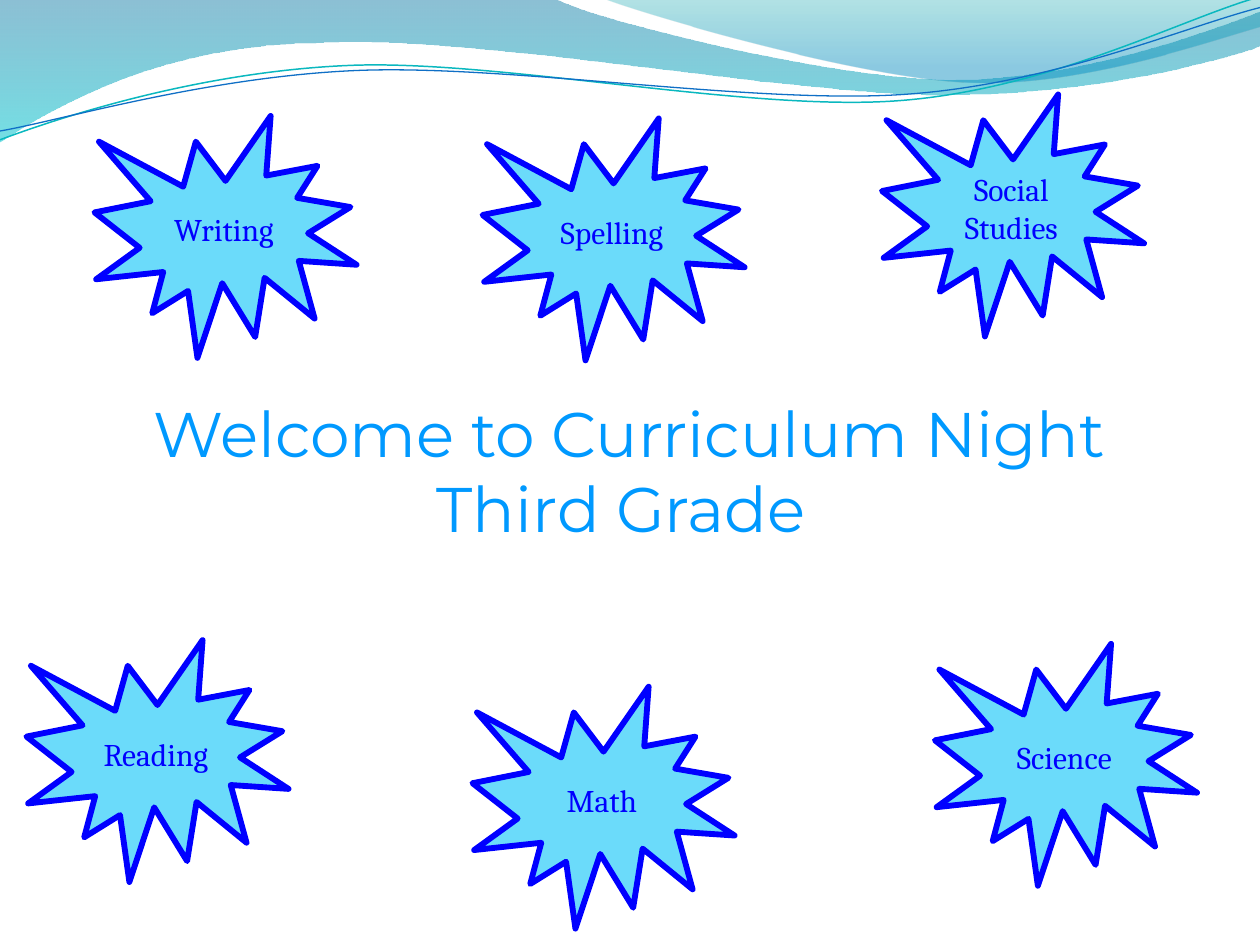
from dataclasses import dataclass

from lxml import etree
from pptx import Presentation
from pptx import util as u
from pptx.dml.color import RGBColor
from pptx.enum import shapes, text
from pptx.oxml import ns

Point = tuple[float, float]
Segment = tuple[Point, ...]
SEAL_WIDTH, SEAL_HEIGHT = 2.08, 1.92
BLUE = "0000FF"


@dataclass
class Stop:
    color: str
    position: float
    opacity: int


@dataclass
class Band:
    start: Point
    segments: list[Segment]
    stops: tuple[Stop, Stop]


@dataclass
class Strand:
    start: Point
    segments: list[Segment]
    color: str
    width: float


@dataclass
class Seal:
    left: float
    top: float
    lines: tuple[str, ...]


@dataclass
class TextStyle:
    font: str
    size: float
    color: str
    outline: float


BANDS = [
    Band((0, -0.01), [((4.4, -0.01),),
                      ((4.76, 0.17), (6.64, 0.63), (7.58, 0.63)),
                      ((8.53, 0.63), (9.58, 0.26), (10, 0.09)),
                      ((10.01, 0.36),),
                      ((9.83, 0.44), (8.7, 0.76), (7.46, 0.75)),
                      ((6.22, 0.75), (3.82, 0.28), (2.57, 0.34)),
                      ((1.29, 0.35), (0.46, 0.83), (-0.01, 1.13)),
                      ((0, -0.01),)],
         (Stop("0074A1", 0, 45), Stop("00C6CF", 1, 55))),
    Band((4.79, -0.01), [((5.09, 0.11), (6.82, 0.62), (7.69, 0.65)),
                         ((8.56, 0.69), (9.61, 0.32), (10, 0.21)),
                         ((10, 0),),
                         ((4.79, -0.01),)],
         (Stop("00A1A9", 0, 30), Stop("008BBF", 0.8, 45))),
]
STRANDS = [
    Strand((0, 1.11), [((0.48, 0.93), (1.58, 0.57), (2.77, 0.52)),
                       ((3.95, 0.47), (5.93, 0.89), (7.13, 0.8)),
                       ((8.33, 0.71), (9.38, 0.15), (9.98, -0.02))], "0AB8BF", 0.85),
    Strand((0, 1.04), [((0.47, 0.96), (1.64, 0.61), (2.83, 0.56)),
                       ((4.03, 0.51), (5.97, 0.83), (7.17, 0.75)),
                       ((8.36, 0.67), (9.41, 0.21), (10, 0.06))], "0F6FC6", 0.75),
]
SEALS = [
    Seal(0.21, 5.08, ("Reading",)),
    Seal(3.75, 5.45, ("Math",)),
    Seal(7.42, 5.11, ("Science",)),
    Seal(0.75, 0.92, ("Writing",)),
    Seal(7, 0.75, ("Social", "Studies")),
    Seal(3.83, 0.94, ("Spelling",)),
]
TITLE_STYLE = TextStyle("Montserrat", 36, "0099FF", 2.25)
SEAL_STYLE = TextStyle("Cambria", 18, BLUE, 0.75)


def rgb(color: str) -> RGBColor:
    return RGBColor.from_string(color)


def to_emu(point: Point) -> tuple[int, int]:
    return u.Inches(point[0]), u.Inches(point[1])


def add_outline(slide, start: Point, segments: list[Segment], close: bool):
    builder = slide.shapes.build_freeform(*to_emu(start))
    builder.add_line_segments([to_emu(segment[-1]) for segment in segments], close=close)
    shape = builder.convert_to_shape()
    shape.shadow.inherit = False
    steps = list(shape._element.iter(ns.qn("a:lnTo")))
    for step, segment in zip(steps, segments):
        if len(segment) == 1:
            continue
        step.tag = ns.qn("a:cubicBezTo")
        for index, control in enumerate(segment[:-1]):
            x, y = to_emu(control)
            step.insert(index, etree.Element(
                ns.qn("a:pt"), x=str(x - shape.left), y=str(y - shape.top)))
    return shape


def add_band(slide, band: Band) -> None:
    shape = add_outline(slide, band.start, band.segments, True)
    shape.line.fill.background()
    shape.fill.gradient()
    shape.fill.gradient_angle = 270
    for target, stop in zip(shape.fill.gradient_stops, band.stops):
        target.color.rgb = rgb(stop.color)
        target.position = stop.position
    for color, stop in zip(shape._element.spPr.iter(ns.qn("a:srgbClr")), band.stops):
        etree.SubElement(color, ns.qn("a:alpha"), val=str(stop.opacity * 1000))


def add_strand(slide, strand: Strand) -> None:
    shape = add_outline(slide, strand.start, strand.segments, False)
    shape.fill.background()
    shape.line.color.rgb = rgb(strand.color)
    shape.line.width = u.Pt(strand.width)


def write_lines(frame, lines: tuple[str, ...], style: TextStyle) -> None:
    for index, line in enumerate(lines):
        paragraph = frame.add_paragraph() if index else frame.paragraphs[0]
        paragraph.alignment = text.PP_ALIGN.CENTER
        run = paragraph.add_run()
        run.text = line
        run.font.name = style.font
        run.font.size = u.Pt(style.size)
        run.font.color.rgb = rgb(style.color)
        outline = etree.Element(ns.qn("a:ln"), w=str(u.Pt(style.outline)))
        fill = etree.SubElement(outline, ns.qn("a:solidFill"))
        etree.SubElement(fill, ns.qn("a:srgbClr"), val=BLUE)
        run.font._element.insert(0, outline)


def add_title(slide) -> None:
    box = slide.shapes.add_textbox(u.Inches(0.66), u.Inches(3.08), u.Inches(8.67), u.Inches(2))
    box.text_frame.word_wrap = False
    write_lines(box.text_frame, ("Welcome to Curriculum Night", "Third Grade "), TITLE_STYLE)


def add_seal(slide, seal: Seal) -> None:
    shape = slide.shapes.add_shape(
        shapes.MSO_SHAPE.EXPLOSION1, u.Inches(seal.left), u.Inches(seal.top),
        u.Inches(SEAL_WIDTH), u.Inches(SEAL_HEIGHT))
    shape.shadow.inherit = False
    shape.fill.solid()
    shape.fill.fore_color.rgb = rgb("6BDBFA")
    shape.line.color.rgb = rgb(BLUE)
    shape.line.width = u.Pt(3.35)
    shape.text_frame.vertical_anchor = text.MSO_ANCHOR.MIDDLE
    write_lines(shape.text_frame, seal.lines, SEAL_STYLE)


def main() -> None:
    presentation = Presentation()
    presentation.slide_width = u.Inches(10)
    presentation.slide_height = u.Inches(7.5)
    slide = presentation.slides.add_slide(presentation.slide_layouts[6])
    for band in BANDS:
        add_band(slide, band)
    for strand in STRANDS:
        add_strand(slide, strand)
    add_title(slide)
    for seal in SEALS:
        add_seal(slide, seal)
    presentation.save("out.pptx")


if __name__ == "__main__":
    main()
